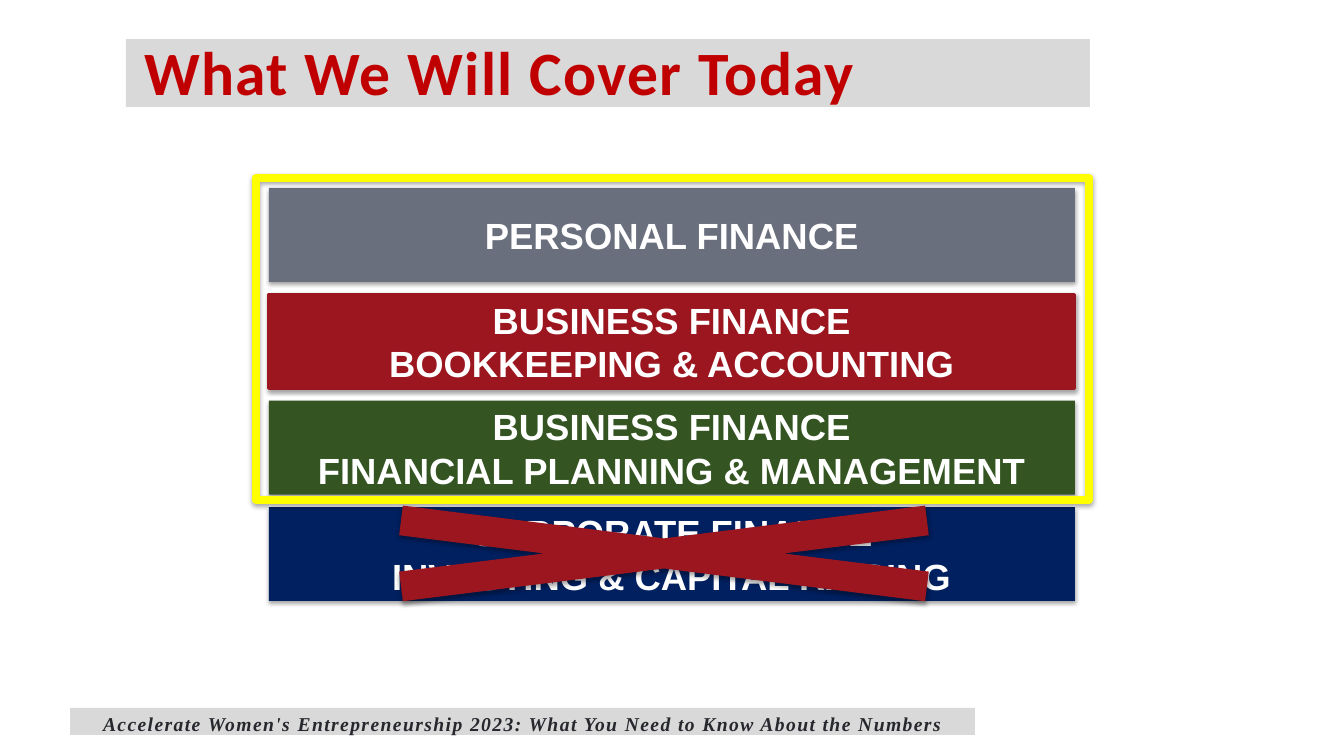
from pptx import Presentation
from pptx.dml.color import RGBColor
from pptx.enum.shapes import MSO_SHAPE
from pptx.enum.text import MSO_ANCHOR, PP_ALIGN
from pptx.oxml import parse_xml
from pptx.oxml.ns import nsdecls
from pptx.util import Pt

PX = 914400 / 100.8
WHITE, RED, GREY, YELLOW = "FFFFFF", "9C1620", "D9D9D9", "FFFF00"

TITLE = "What We Will Cover Today"
FOOTER = ("Accelerate Women's Entrepreneurship 2023: "
          "What You Need to Know About the Numbers")
TOPICS = [
    ("PERSONAL FINANCE", "6A6F7D", None),
    ("BUSINESS FINANCE\nBOOKKEEPING & ACCOUNTING", RED, RED),
    ("BUSINESS FINANCE\nFINANCIAL PLANNING & MANAGEMENT", "345522", None),
    ("CORPORATE FINANCE\nINVESTING & CAPITAL RAISING", "002060", None),
]
BAR_X, BAR_Y, BAR_W, BAR_H = 269, 188, 806, 94
END_Y = 507
STEP = (END_Y - BAR_Y) / (len(TOPICS) - 1)


def emu(px):
    return round(px * PX)


def color(code):
    return RGBColor.from_string(code)


def shade(shape):
    """Add a soft shadow straight below the shape."""
    shape._element.spPr.append(parse_xml(
        f'<a:effectLst {nsdecls("a")}>'
        f'<a:outerShdw blurRad="{Pt(3.1)}" dist="{Pt(1.8)}" dir="5400000" rotWithShape="0">'
        '<a:srgbClr val="000000"><a:alpha val="35000"/></a:srgbClr>'
        '</a:outerShdw></a:effectLst>'))


def draw(slide, kind, box, fill=None, line=None, width=0, shadow=True):
    shape = slide.shapes.add_shape(kind, *map(emu, box))
    if fill:
        shape.fill.solid()
        shape.fill.fore_color.rgb = color(fill)
    else:
        shape.fill.background()
    if line:
        shape.line.color.rgb = color(line)
        shape.line.width = Pt(width)
    else:
        shape.line.fill.background()
    if shadow:
        shade(shape)
    else:
        shape.shadow.inherit = False
    return shape


def write(shape, text, font, size, ink, align=PP_ALIGN.CENTER, italic=False, track=0):
    frame = shape.text_frame
    frame.word_wrap = True
    frame.text = text
    for para in frame.paragraphs:
        para.alignment = align
        for run in para.runs:
            face = run.font
            face.name, face.size = font, Pt(size)
            face.bold, face.italic = True, italic
            face.color.rgb = color(ink)
            if track:
                face._element.set("spc", str(track))
    return frame


def band(slide, box, left, text, *style, **more):
    """Draw a grey strip with one tight line of text at its foot."""
    shape = draw(slide, MSO_SHAPE.RECTANGLE, box, GREY, shadow=False)
    frame = write(shape, text, *style, track=100, **more)
    frame.vertical_anchor = MSO_ANCHOR.BOTTOM
    frame.margin_left = emu(left)
    frame.margin_top = frame.margin_right = frame.margin_bottom = 0
    frame.paragraphs[0].line_spacing = 0.8


def main():
    deck = Presentation()
    deck.slide_width, deck.slide_height = emu(1344), emu(756)
    slide = deck.slides.add_slide(deck.slide_layouts[6])

    for i, (text, fill, line) in enumerate(TOPICS):
        box = (BAR_X, BAR_Y + i * STEP, BAR_W, BAR_H)
        bar = draw(slide, MSO_SHAPE.RECTANGLE, box, fill, line, 2.25)
        frame = write(bar, text, "Arial", 26, WHITE)
        frame.vertical_anchor = MSO_ANCHOR.MIDDLE

    draw(slide, MSO_SHAPE.RECTANGLE, (256, 178, 833, 322), line=YELLOW, width=6)
    draw(slide, MSO_SHAPE.MATH_MULTIPLY, (158, 490, 1012, 127), RED)

    band(slide, (126, 39, 964, 68), 18, TITLE, "Calibri", 44, "C00000",
         align=PP_ALIGN.LEFT)
    band(slide, (70, 708, 905, 27), 0, FOOTER, "Times New Roman", 14, "26282D",
         italic=True)
    deck.save("out.pptx")


if __name__ == "__main__":
    main()
